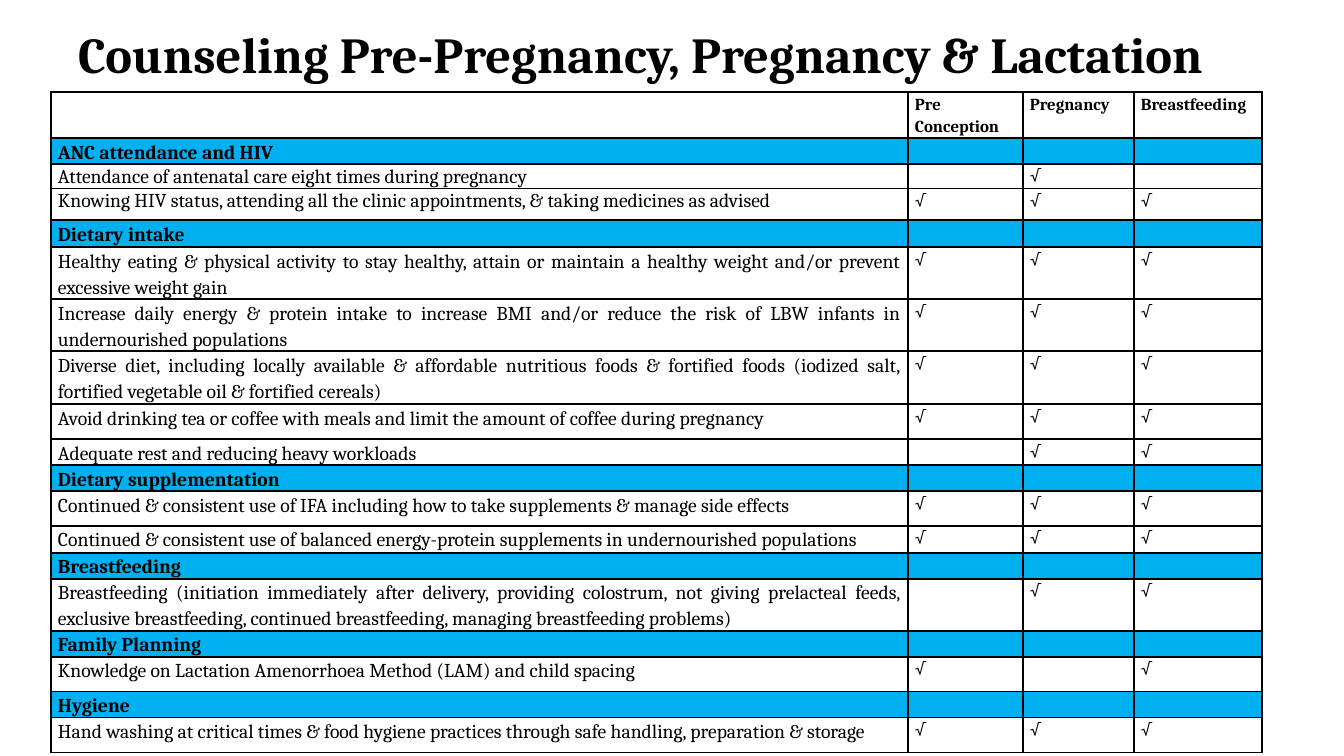
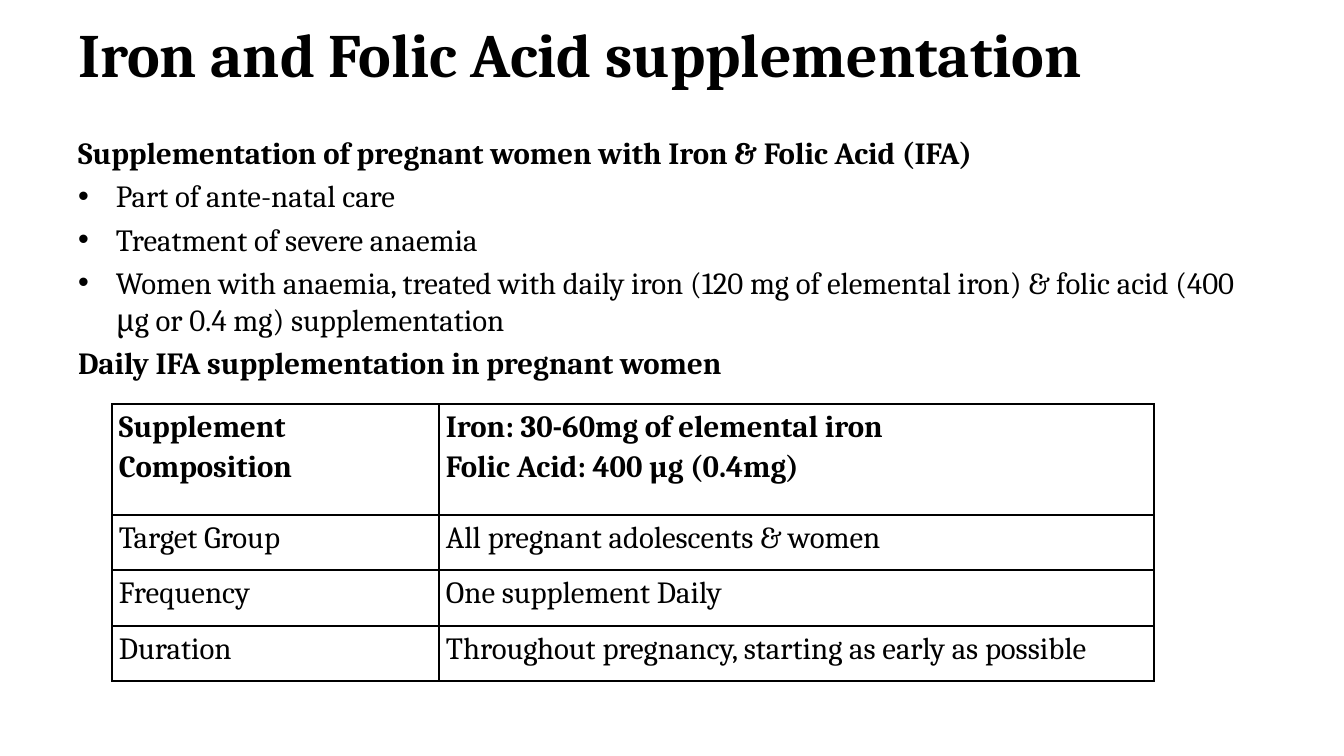
import pptx
import pptx.dml.color
import pptx.enum.text
import pptx.oxml
import pptx.oxml.ns
import pptx.util
from lxml import etree

PX = 914400 / 100.8
BLACK = pptx.dml.color.RGBColor(0x00, 0x00, 0x00)
SECTION_BLUE = pptx.dml.color.RGBColor(0x00, 0xB0, 0xF0)
FONT = "Cambria"
LEFT = pptx.enum.text.PP_ALIGN.LEFT
JUSTIFY = pptx.enum.text.PP_ALIGN.JUSTIFY
TITLE_BOX = (68, 21, 1210, 64)
CELL_INSET = 7
BORDER_PT = 1

COUNSELING_HEADER = ["", "Pre Conception", "Pregnancy", "Breastfeeding"]
COUNSELING_TOPICS = [
    (26, "ANC attendance and HIV", None),
    (24, "Attendance of antenatal care eight times during pregnancy", "010"),
    (32, "Knowing HIV status, attending all the clinic appointments, & taking medicines as advised", "111"),
    (27, "Dietary intake", None),
    (52, "Healthy eating & physical activity to stay healthy, attain or maintain a healthy weight "
         "and/or prevent excessive weight gain", "111"),
    (52, "Increase daily energy & protein intake to increase BMI and/or reduce the risk of LBW "
         "infants in undernourished populations", "111"),
    (53, "Diverse diet, including locally available & affordable nutritious foods & fortified foods "
         "(iodized salt, fortified vegetable oil & fortified cereals)", "111"),
    (35, "Avoid drinking tea or coffee with meals and limit the amount of coffee during pregnancy", "111"),
    (26, "Adequate rest and reducing heavy workloads", "011"),
    (26, "Dietary supplementation", None),
    (35, "Continued & consistent use of IFA including how to take supplements & manage side effects", "111"),
    (27, "Continued & consistent use of balanced energy-protein supplements in undernourished "
         "populations", "111"),
    (26, "Breastfeeding", None),
    (52, "Breastfeeding (initiation immediately after delivery, providing colostrum, not giving "
         "prelacteal feeds, exclusive breastfeeding, continued breastfeeding, managing "
         "breastfeeding problems)", "011"),
    (26, "Family Planning", None),
    (35, "Knowledge on Lactation Amenorrhoea Method (LAM) and child spacing", "101"),
    (26, "Hygiene", None),
    (35, "Hand washing at critical times & food hygiene practices through safe handling, "
         "preparation & storage", "111"),
]

IFA_POINTS = [
    ("Supplementation of pregnant women with Iron & Folic Acid (IFA)", True),
    ("Part of ante-natal care", False),
    ("Treatment of severe anaemia", False),
    ("Women with anaemia, treated with daily iron (120 mg of elemental iron) & folic acid "
     "(400 μg or 0.4 mg) supplementation", False),
    ("Daily IFA supplementation in pregnant women", True),
]
IFA_SCHEDULE = [
    (111, "Supplement Composition", "Iron: 30-60mg of elemental iron\nFolic Acid: 400 µg (0.4mg)"),
    (55, "Target Group", "All pregnant adolescents & women"),
    (56, "Frequency", "One supplement Daily"),
    (55, "Duration", "Throughout pregnancy, starting as early as possible"),
]


def px(length):
    """Turn px into EMU."""
    return pptx.util.Emu(round(length * PX))


def write_text(frame, text, size, bold=False, align=LEFT, spacing=None):
    """Write each line of text as a formatted paragraph and return the paragraphs."""
    frame.text = text
    for paragraph in frame.paragraphs:
        paragraph.alignment = align
        if spacing:
            paragraph.line_spacing = spacing
        for run in paragraph.runs:
            run.font.name = FONT
            run.font.size = pptx.util.Pt(size)
            run.font.bold = bold
            run.font.color.rgb = BLACK
        if not paragraph.runs:
            paragraph._p.get_or_add_endParaRPr().set("sz", str(size * 100))
    return frame.paragraphs


def place(shape, box):
    """Move a shape to a px box."""
    shape.left, shape.top, shape.width, shape.height = map(px, box)


def add_titled_slide(deck, layout_name, title, size):
    """Add a slide with its title in the shared style."""
    slide = deck.slides.add_slide(deck.slide_layouts.get_by_name(layout_name))
    heading = slide.shapes.title
    place(heading, TITLE_BOX)
    write_text(heading.text_frame, title, size, bold=True)
    heading.text_frame.vertical_anchor = pptx.enum.text.MSO_ANCHOR.MIDDLE
    heading.text_frame.auto_size = pptx.enum.text.MSO_AUTO_SIZE.NONE
    return slide


def outline_cell(cell):
    """Draw the four black borders of a cell."""
    properties = cell._tc.get_or_add_tcPr()
    for edge in ("a:lnL", "a:lnR", "a:lnT", "a:lnB"):
        line = etree.SubElement(properties, pptx.oxml.ns.qn(edge), w=str(pptx.util.Pt(BORDER_PT)))
        paint = etree.SubElement(line, pptx.oxml.ns.qn("a:solidFill"))
        etree.SubElement(paint, pptx.oxml.ns.qn("a:srgbClr"), val=str(BLACK))


def fill_cell(cell, text, size, bold=False, shade=None, spacing=1.15):
    """Write, outline and shade one cell."""
    cell.margin_left = cell.margin_right = px(CELL_INSET)
    cell.margin_top = cell.margin_bottom = 0
    write_text(cell.text_frame, text, size, bold, JUSTIFY, spacing)
    outline_cell(cell)
    if shade is None:
        cell.fill.background()
    else:
        cell.fill.solid()
        cell.fill.fore_color.rgb = shade


def add_grid(slide, left, top, widths, heights):
    """Add a plain table with the given column widths and row heights."""
    grid = slide.shapes.add_table(len(heights), len(widths), px(left), px(top),
                                  px(sum(widths)), px(sum(heights))).table
    grid.first_row = grid.horz_banding = False
    for column, width in zip(grid.columns, widths):
        column.width = px(width)
    for row, height in zip(grid.rows, heights):
        row.height = px(height)
    return grid


def add_counseling_table(slide, left, top):
    """Add the checklist of counseling topics by stage."""
    heights = [46] + [height for height, _, _ in COUNSELING_TOPICS]
    grid = add_grid(slide, left, top, [857, 115, 111, 128], heights)
    for column, stage in enumerate(COUNSELING_HEADER):
        fill_cell(grid.cell(0, column), stage, 12, bold=True)
    for row, (height, topic, stages) in enumerate(COUNSELING_TOPICS, 1):
        section = stages is None
        shade = SECTION_BLUE if section else None
        spacing = 1.07 if height in (24, 32) else 1.15
        fill_cell(grid.cell(row, 0), topic, 14, section, shade, spacing)
        for column, flag in enumerate(stages or "000", 1):
            fill_cell(grid.cell(row, column), "√" if flag == "1" else "", 12, shade=shade)


def add_ifa_points(slide, box):
    """Fill the body with headings and bullets."""
    body = slide.placeholders[1]
    place(body, box)
    frame = body.text_frame
    frame.auto_size = pptx.enum.text.MSO_AUTO_SIZE.NONE
    paragraphs = write_text(frame, "\n".join(text for text, _ in IFA_POINTS), 22)
    paragraphs[0].space_before = pptx.util.Pt(0)
    for paragraph, (_, is_heading) in zip(paragraphs, IFA_POINTS):
        if is_heading:
            properties = paragraph._p.get_or_add_pPr()
            properties.set("marL", "0")
            properties.set("indent", "0")
            etree.SubElement(properties, pptx.oxml.ns.qn("a:buNone"))
            paragraph.runs[0].font.bold = True


def add_ifa_table(slide, left, top):
    """Add the supplementation schedule."""
    grid = add_grid(slide, left, top, [327, 715], [height for height, _, _ in IFA_SCHEDULE])
    for row, (_, label, detail) in enumerate(IFA_SCHEDULE):
        for column, text in enumerate((label, detail)):
            fill_cell(grid.cell(row, column), text, 22, bold=row == 0)


def main():
    """Build and save the deck."""
    deck = pptx.Presentation()
    deck.slide_width, deck.slide_height = px(1344), px(756)
    counseling = add_titled_slide(deck, "Title Only",
                                  "Counseling Pre-Pregnancy, Pregnancy & Lactation", 36)
    add_counseling_table(counseling, 51, 92)
    supplementation = add_titled_slide(deck, "Title and Content",
                                       "Iron and Folic Acid supplementation", 44)
    add_ifa_points(supplementation, (68, 129, 1210, 546))
    add_ifa_table(supplementation, 112, 404)
    deck.save("out.pptx")


if __name__ == "__main__":
    main()
